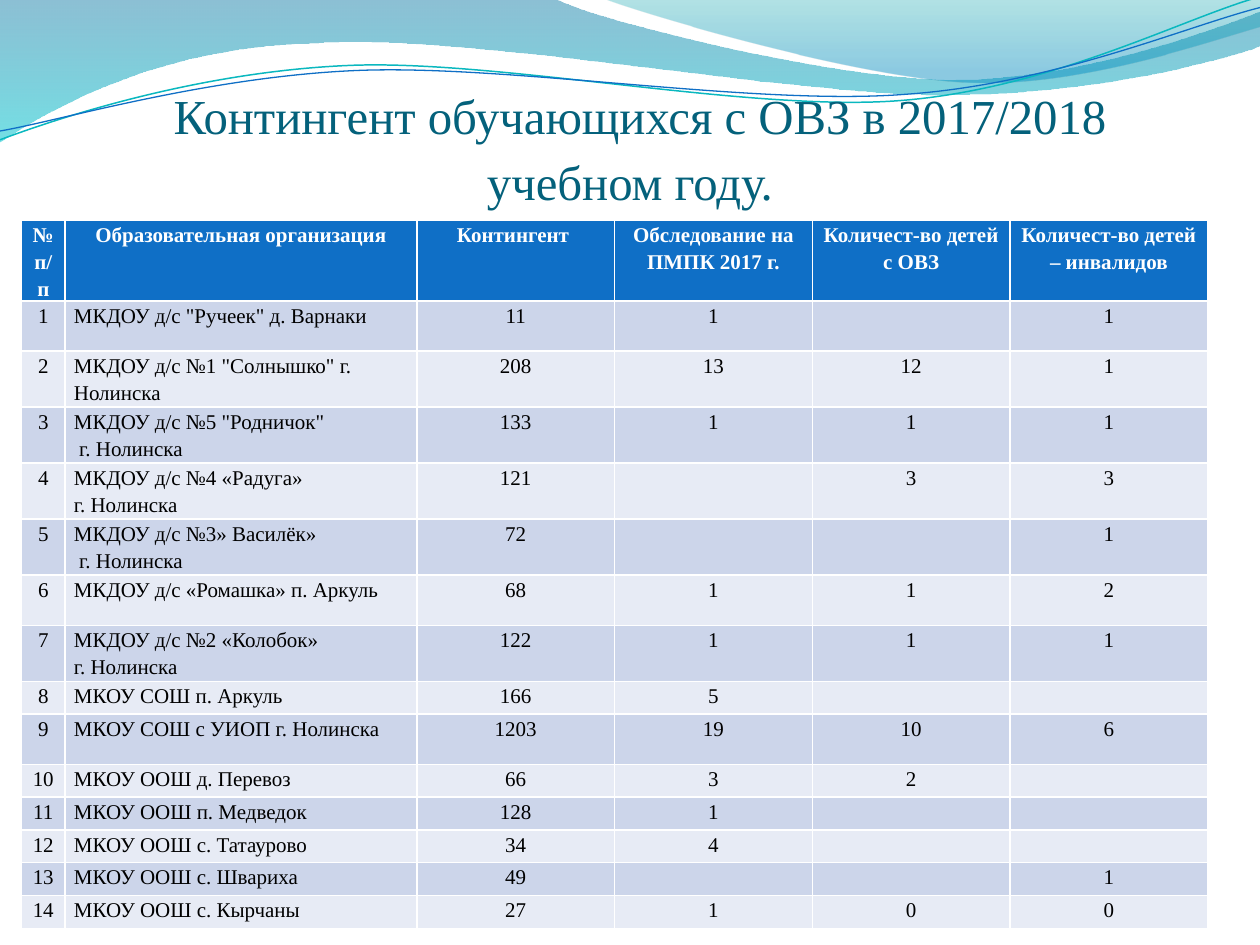
from lxml import etree
from pptx import Presentation
from pptx.dml.color import RGBColor
from pptx.enum.text import MSO_ANCHOR, PP_ALIGN
from pptx.oxml.ns import qn
from pptx.util import Inches, Pt

LEFT, CENTER = PP_ALIGN.LEFT, PP_ALIGN.CENTER
BOTTOM = MSO_ANCHOR.BOTTOM
FONT = "Times New Roman"

# Content
TITLE = "Контингент обучающихся с ОВЗ в 2017/2018 учебном году."
HEADER = ["№ п/п", "Образовательная организация", "Контингент ",
          "Обследование на ПМПК 2017 г.", "Количест-во детей с ОВЗ",
          "Количест-во детей – инвалидов"]

# Row heights and column widths in points
ONE_LINE, TALL, TWO_LINES = 18.75, 28.75, 32
COLUMN_WIDTHS = [25, 201] + [113] * 4

# Organisation, four figures, row height
ROWS = [
    ('МКДОУ д/с "Ручеек" д. Варнаки', "11", "1", "", "1", TALL),
    ('МКДОУ д/с №1 "Солнышко" г. Нолинска', "208", "13", "12", "1", TWO_LINES),
    ('МКДОУ д/с №5 "Родничок"\n г. Нолинска', "133", "1", "1", "1", TWO_LINES),
    ("МКДОУ д/с №4 «Радуга»\nг. Нолинска", "121", "", "3", "3", TWO_LINES),
    ("МКДОУ д/с №3» Василёк»\n г. Нолинска", "72", "", "", "1", TWO_LINES),
    ("МКДОУ д/с «Ромашка» п. Аркуль", "68", "1", "1", "2", TALL),
    ("МКДОУ д/с №2 «Колобок»\nг. Нолинска", "122", "1", "1", "1", TWO_LINES),
    ("МКОУ СОШ п. Аркуль", "166", "5", "", "", ONE_LINE),
    ("МКОУ СОШ с УИОП г. Нолинска", "1203", "19", "10", "6", TALL),
    ("МКОУ ООШ д. Перевоз", "66", "3", "2", "", ONE_LINE),
    ("МКОУ ООШ п. Медведок", "128", "1", "", "", ONE_LINE),
    ("МКОУ ООШ с. Татаурово", "34", "4", "", "", ONE_LINE),
    ("МКОУ ООШ с. Швариха", "49", "", "", "1", ONE_LINE),
    ("МКОУ ООШ с. Кырчаны", "27", "1", "0", "0", ONE_LINE),
]
HEADER_FILL, BAND_FILLS = "0F6FC6", ["CCD5EA", "E7EBF5"]

# Waves: a pair is a straight step, six numbers are a Bezier curve
BANDS = [
    ([(0, 0), (4.4, -0.01), (4.76, 0.17, 6.64, 0.63, 7.58, 0.63),
      (8.53, 0.63, 9.58, 0.26, 10, 0.09), (10.01, 0.36),
      (9.83, 0.44, 8.7, 0.76, 7.46, 0.75),
      (6.22, 0.75, 3.82, 0.28, 2.57, 0.34),
      (1.29, 0.36, 0.46, 0.83, -0.01, 1.13), (0, 0)],
     [(0, "0074A1", 45), (1, "00C6CF", 55)]),
    ([(4.79, -0.01), (5.09, 0.11, 6.82, 0.62, 7.69, 0.65),
      (8.56, 0.69, 9.61, 0.32, 10, 0.21), (10, 0), (4.79, -0.01)],
     [(0, "00A1A9", 30), (0.8, "008BBF", 45)]),
]
LINES = [
    ([(0, 1.11), (0.48, 0.93, 1.58, 0.57, 2.77, 0.52),
      (3.95, 0.47, 5.93, 0.89, 7.13, 0.8),
      (8.33, 0.71, 9.38, 0.15, 9.98, -0.02)], "0AB8BF", 0.85),
    ([(0, 1.04), (0.47, 0.96, 1.64, 0.61, 2.83, 0.56),
      (4.03, 0.51, 5.97, 0.84, 7.17, 0.75),
      (8.36, 0.67, 9.41, 0.21, 10, 0.06)], "0F6FC6", 0.75),
]


def color(value):
    return RGBColor.from_string(value)


def write_text(frame, text, size=12, fill="000000", bold=False, align=CENTER, spacing=1.15):
    for index, line in enumerate(text.split("\n")):
        paragraph = frame.paragraphs[0] if index == 0 else frame.add_paragraph()
        paragraph.alignment = align
        paragraph.line_spacing = spacing
        if not line:
            # An empty cell must not be taller than its row
            paragraph._p.get_or_add_endParaRPr().set("sz", str(size * 100))
            continue
        run = paragraph.add_run()
        run.text = line
        run.font.name = FONT
        run.font.size = Pt(size)
        run.font.bold = bold
        run.font.color.rgb = color(fill)


def add_wave(slide, steps, close):
    points = [(Inches(step[i]), Inches(step[i + 1]))
              for step in steps for i in range(0, len(step), 2)]
    builder = slide.shapes.build_freeform(*points[0])
    builder.add_line_segments(points[1:], close=close)
    shape = builder.convert_to_shape()
    shape.shadow.inherit = False
    # Join each three segments of a curved step into one Bezier curve
    segments = iter(list(shape._element.spPr.iter(qn("a:lnTo"))))
    for step in steps[1:]:
        segment = next(segments)
        if len(step) == 6:
            segment.tag = qn("a:cubicBezTo")
            for _ in range(2):
                control = next(segments)
                segment.append(control[0])
                control.getparent().remove(control)
    return shape


def add_band(slide, steps, stops):
    shape = add_wave(slide, steps, close=True)
    shape.line.fill.background()
    shape.fill.gradient()
    shape.fill.gradient_angle = 270
    for stop, (position, value, _) in zip(shape.fill.gradient_stops, stops):
        stop.position = position
        stop.color.rgb = color(value)
    gradient_colors = shape._element.spPr.iter(qn("a:srgbClr"))
    for element, (_, _, opacity) in zip(list(gradient_colors), stops):
        etree.SubElement(element, qn("a:alpha")).set("val", str(opacity * 1000))


def add_line(slide, steps, value, width):
    shape = add_wave(slide, steps, close=False)
    shape.fill.background()
    shape.line.color.rgb = color(value)
    shape.line.width = Pt(width)


def add_title(slide):
    title = slide.shapes.title
    title.left, title.top, title.width, title.height = map(Inches, (0.5, 0.92, 9, 0.75))
    frame = title.text_frame
    frame.word_wrap = True
    frame.vertical_anchor = BOTTOM
    frame.margin_left = frame.margin_right = frame.margin_bottom = 0
    write_text(frame, TITLE, size=27.9, fill="04617B", spacing=1.13)
    frame.paragraphs[0]._p.get_or_add_pPr().set("indent", str(Inches(0.16)))
    # Bring the title in front of the waves
    slide.shapes._spTree.append(title._element)


def add_contingent_table(slide):
    heights = [TWO_LINES] + [row[-1] for row in ROWS]
    texts = [HEADER] + [[str(number), *row[:-1]] for number, row in enumerate(ROWS, 1)]
    table = slide.shapes.add_table(
        len(texts), len(HEADER), Inches(0.17), Inches(1.75),
        Pt(sum(COLUMN_WIDTHS)), Pt(sum(heights))).table
    for column, width in zip(table.columns, COLUMN_WIDTHS):
        column.width = Pt(width)
    for row_index, (row, height) in enumerate(zip(table.rows, heights)):
        row.height = Pt(height)
        is_header = row_index == 0
        fill = HEADER_FILL if is_header else BAND_FILLS[(row_index - 1) % 2]
        for column_index, cell in enumerate(row.cells):
            cell.fill.solid()
            cell.fill.fore_color.rgb = color(fill)
            cell.margin_left = cell.margin_right = Inches(0.07)
            cell.margin_top = cell.margin_bottom = 0
            write_text(cell.text_frame, texts[row_index][column_index],
                       fill="FFFFFF" if is_header else "000000", bold=is_header,
                       align=LEFT if column_index == 1 and not is_header else CENTER)


def main():
    presentation = Presentation()
    presentation.slide_width, presentation.slide_height = Inches(10), Inches(7.5)
    slide = presentation.slides.add_slide(presentation.slide_layouts[5])
    for steps, stops in BANDS:
        add_band(slide, steps, stops)
    for steps, value, width in LINES:
        add_line(slide, steps, value, width)
    add_title(slide)
    add_contingent_table(slide)
    presentation.save("out.pptx")


if __name__ == "__main__":
    main()
